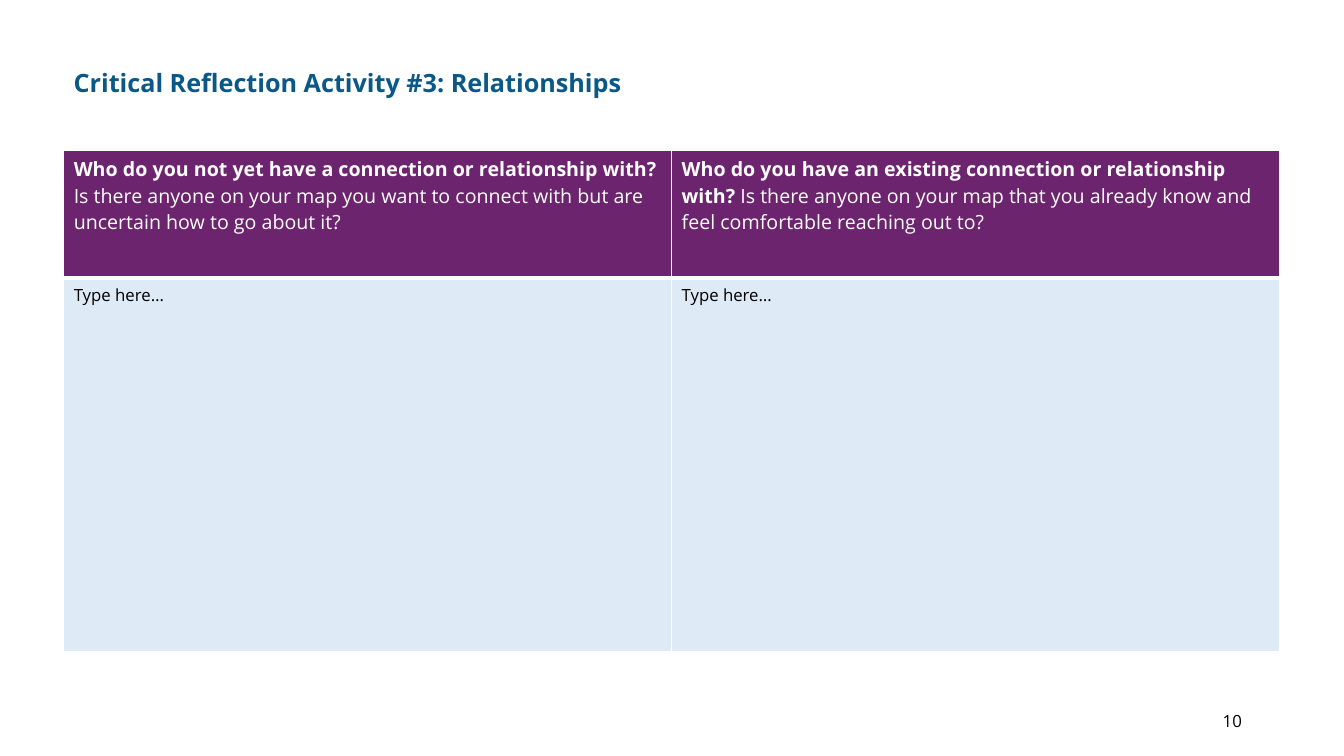
from dataclasses import dataclass

from lxml import etree
from pptx import Presentation
from pptx.dml.color import RGBColor
from pptx.enum.text import MSO_ANCHOR, PP_ALIGN
from pptx.oxml.ns import qn
from pptx.util import Pt

MIDDLE = MSO_ANCHOR.MIDDLE
LEFT, RIGHT = PP_ALIGN.LEFT, PP_ALIGN.RIGHT
BLANK_LAYOUT = 6


@dataclass(frozen=True)
class Theme:
    font: str = "Open Sans"
    title: str = "0A5887"
    header: str = "6D246E"
    body: str = "DEEBF7"
    white: str = "FFFFFF"
    black: str = "000000"
    title_size: int = 18
    question_size: int = 14
    small_size: int = 12


THEME = Theme()

QUESTIONS = [
    ("Who do you not yet have a connection or relationship with? ",
     "Is there anyone on your map you want to connect with but are uncertain how to go about it?"),
    ("Who do you have an existing connection or relationship with? ",
     "Is there anyone on your map that you already know and feel comfortable reaching out to?"),
]
ANSWERS = [("", "Type here…"), ("", "Type here…")]


def style_font(para, size, color):
    para.font.name = THEME.font
    para.font.size = Pt(size)
    para.font.color.rgb = RGBColor.from_string(color)


def add_label(page, box, text, size, color, bold=False, align=LEFT):
    label = page.shapes.add_textbox(*map(Pt, box))
    frame = label.text_frame
    frame.word_wrap = True
    frame.vertical_anchor = MIDDLE
    para = frame.paragraphs[0]
    para.text = text
    para.alignment = align
    style_font(para, size, color)
    para.font.bold = bold


def set_borders(cell, bottom_width):
    properties = cell._tc.get_or_add_tcPr()
    widths = {"a:lnL": 1, "a:lnR": 1, "a:lnT": 1, "a:lnB": bottom_width}
    for position, (tag, width) in enumerate(widths.items()):
        line = etree.Element(qn(tag), w=str(Pt(width)))
        fill = etree.SubElement(line, qn("a:solidFill"))
        etree.SubElement(fill, qn("a:srgbClr"), val=THEME.white)
        properties.insert(position, line)


def fill_cell(cell, lead, rest, size, color, background, bottom_width):
    cell.fill.solid()
    cell.fill.fore_color.rgb = RGBColor.from_string(background)
    set_borders(cell, bottom_width)
    para = cell.text_frame.paragraphs[0]
    style_font(para, size, color)
    for text, bold in ((lead, True), (rest, False)):
        if text:
            span = para.add_run()
            span.text = text
            span.font.bold = bold


def add_reflection_table(page, box, header_height):
    left, top, width, height = box
    frame = page.shapes.add_table(2, len(QUESTIONS), *map(Pt, box))
    table = frame.table
    table.first_row = False
    table.horz_banding = False
    for column in table.columns:
        column.width = Pt(width / len(QUESTIONS))
    table.rows[0].height = Pt(header_height)
    table.rows[1].height = Pt(height - header_height)
    row_styles = [
        (QUESTIONS, THEME.question_size, THEME.white, THEME.header, 3),
        (ANSWERS, THEME.small_size, THEME.black, THEME.body, 1),
    ]
    for row, (entries, *style) in enumerate(row_styles):
        for column, (lead, rest) in enumerate(entries):
            fill_cell(table.cell(row, column), lead, rest, *style)


def main():
    deck = Presentation()
    deck.slide_width, deck.slide_height = Pt(960), Pt(540)
    page = deck.slides.add_slide(deck.slide_layouts[BLANK_LAYOUT])
    add_label(page, (45.5, 44.6, 480, 29), "Critical Reflection Activity #3: Relationships",
              THEME.title_size, THEME.title, bold=True)
    add_reflection_table(page, (45.5, 107.5, 868.4, 357.8), 91.2)
    add_label(page, (678.2, 500.4, 216, 28.8), "10",
              THEME.small_size, THEME.black, align=RIGHT)
    deck.save("out.pptx")


if __name__ == "__main__":
    main()
